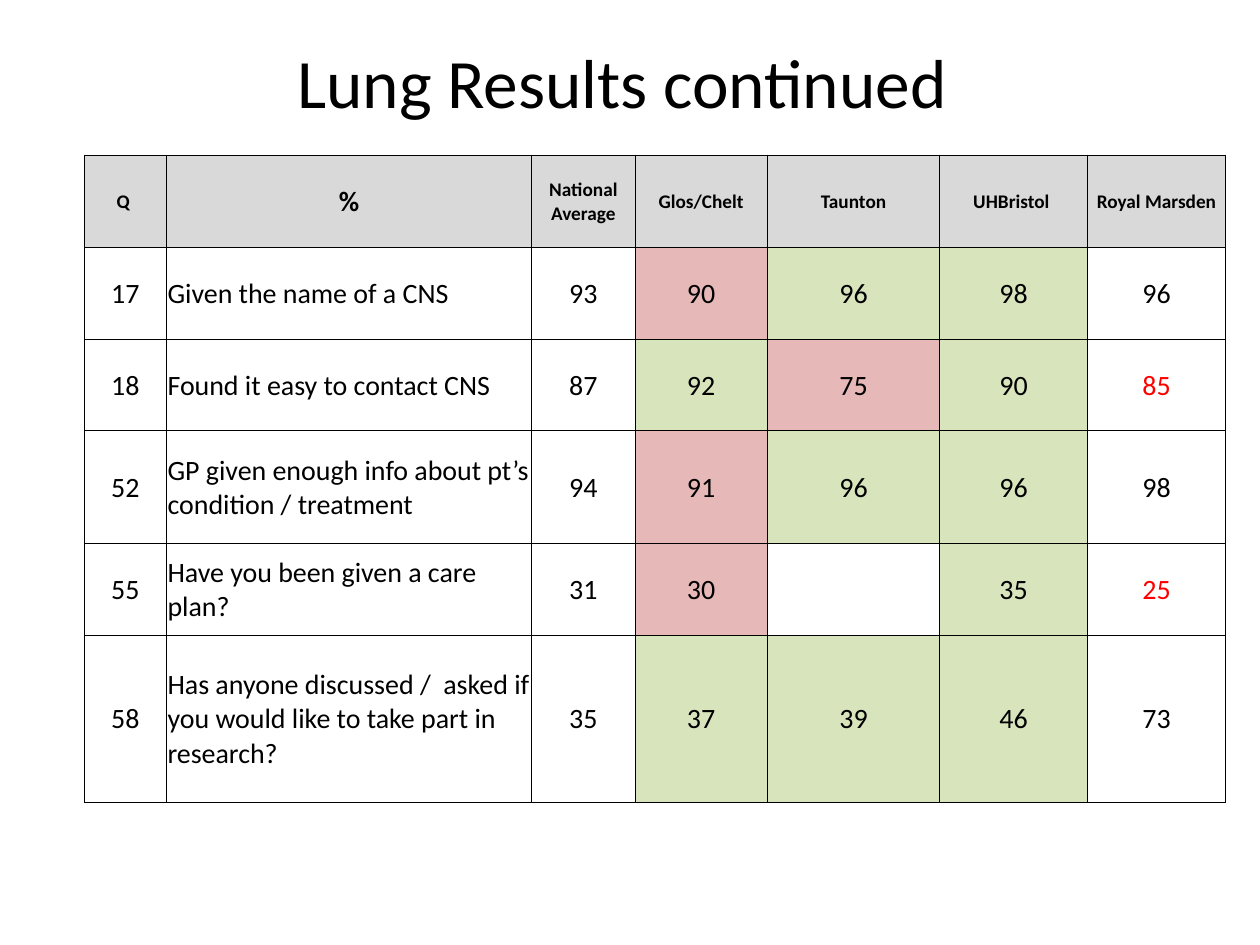
import pptx
import pptx.dml.color
import pptx.enum.text
import pptx.oxml
import pptx.oxml.ns
import pptx.util

ANCHOR = pptx.enum.text.MSO_ANCHOR
ALIGN = pptx.enum.text.PP_ALIGN
WIDTH, HEIGHT = 10, 7.5
COLUMNS = [0.65, 2.9, 0.82, 1.05, 1.37, 1.17, 1.1]
ROWS = [0.73, 0.73, 0.73, 0.89, 0.73, 1.33]
QUESTION, AVERAGE, MARSDEN = 1, 2, 6
BLACK, RED = "000000", "FF0000"
HEADER_FILL, BELOW_FILL, ABOVE_FILL = "D9D9D9", "E6B8B7", "D8E4BC"
HEADINGS = ["Q ", "%", "National Average", "Glos/Chelt", "Taunton", "UHBristol ", "Royal Marsden"]
RESULTS = [
    [17, "Given the name of a CNS", 93, 90, 96, 98, 96],
    [18, "Found it easy to contact CNS", 87, 92, 75, 90, 85],
    [52, "GP given enough info about pt’s condition / treatment", 94, 91, 96, 96, 98],
    [55, "Have you been given a care plan?", 31, 30, None, 35, 25],
    [58, "Has anyone discussed /  asked if you would like to take part in research?", 35, 37, 39, 46, 73],
]


def color(value):
    return pptx.dml.color.RGBColor.from_string(value)


def set_all(target, values):
    for name, value in values.items():
        setattr(target, name, value)


def write(frame, text, size, shade=BLACK, bold=False, align=ALIGN.CENTER):
    para = frame.paragraphs[0]
    para.alignment = align
    span = para.add_run()
    span.text = text
    set_all(span.font, {"name": "Calibri", "size": pptx.util.Pt(size), "bold": bold})
    span.font.color.rgb = color(shade)


def add_title(slide, text):
    title = slide.shapes.title
    set_all(title, {
        "left": pptx.util.Inches(WIDTH * 0.05), "top": pptx.util.Inches(HEIGHT * 0.04),
        "width": pptx.util.Inches(WIDTH * 0.9), "height": pptx.util.Inches(0.69),
    })
    set_all(title.text_frame, {
        "auto_size": pptx.enum.text.MSO_AUTO_SIZE.NONE,
        "vertical_anchor": ANCHOR.MIDDLE, "word_wrap": True,
    })
    write(title.text_frame, text, 39.6)


def add_borders(cell):
    properties = cell._tc.get_or_add_tcPr()
    for index, side in enumerate(["lnL", "lnR", "lnT", "lnB"]):
        properties.insert(index, pptx.oxml.parse_xml(
            f'<a:{side} {pptx.oxml.ns.nsdecls("a")} w="{pptx.util.Pt(0.5)}">'
            f'<a:solidFill><a:srgbClr val="{BLACK}"/></a:solidFill></a:{side}>'))


def format_cell(cell, fill):
    margin = pptx.util.Inches(0.01)
    set_all(cell, {
        "margin_left": margin, "margin_right": margin, "margin_top": margin,
        "margin_bottom": 0, "vertical_anchor": ANCHOR.MIDDLE,
    })
    if fill:
        cell.fill.solid()
        cell.fill.fore_color.rgb = color(fill)
    else:
        cell.fill.background()
    add_borders(cell)


def fill_header(table):
    for column, heading in enumerate(HEADINGS):
        cell = table.cell(0, column)
        format_cell(cell, HEADER_FILL)
        write(cell.text_frame, heading, 16 if column == QUESTION else 11, bold=True)


def fill_result(table, row, result):
    for column, value in enumerate(result):
        cell = table.cell(row, column)
        fill, shade = None, BLACK
        if column > AVERAGE and value is not None:
            below = value < result[AVERAGE]
            if column == MARSDEN:
                shade = RED if below else BLACK
            else:
                fill = BELOW_FILL if below else ABOVE_FILL
        format_cell(cell, fill)
        if value is not None:
            align = ALIGN.LEFT if column == QUESTION else ALIGN.CENTER
            write(cell.text_frame, str(value), 16, shade, align=align)


def add_results(slide):
    bounds = [pptx.util.Inches(value) for value in (0.67, 1.23, sum(COLUMNS), sum(ROWS))]
    table = slide.shapes.add_table(len(ROWS), len(COLUMNS), *bounds).table
    set_all(table, {"first_row": False, "horz_banding": False})
    for column, width in zip(table.columns, COLUMNS):
        column.width = pptx.util.Inches(width)
    for row, height in zip(table.rows, ROWS):
        row.height = pptx.util.Inches(height)
    fill_header(table)
    for row, result in enumerate(RESULTS, 1):
        fill_result(table, row, result)


def main():
    deck = pptx.Presentation()
    set_all(deck, {"slide_width": pptx.util.Inches(WIDTH), "slide_height": pptx.util.Inches(HEIGHT)})
    slide = deck.slides.add_slide(deck.slide_layouts.get_by_name("Title Only"))
    add_title(slide, "Lung Results continued ")
    add_results(slide)
    deck.save("out.pptx")


if __name__ == "__main__":
    main()
